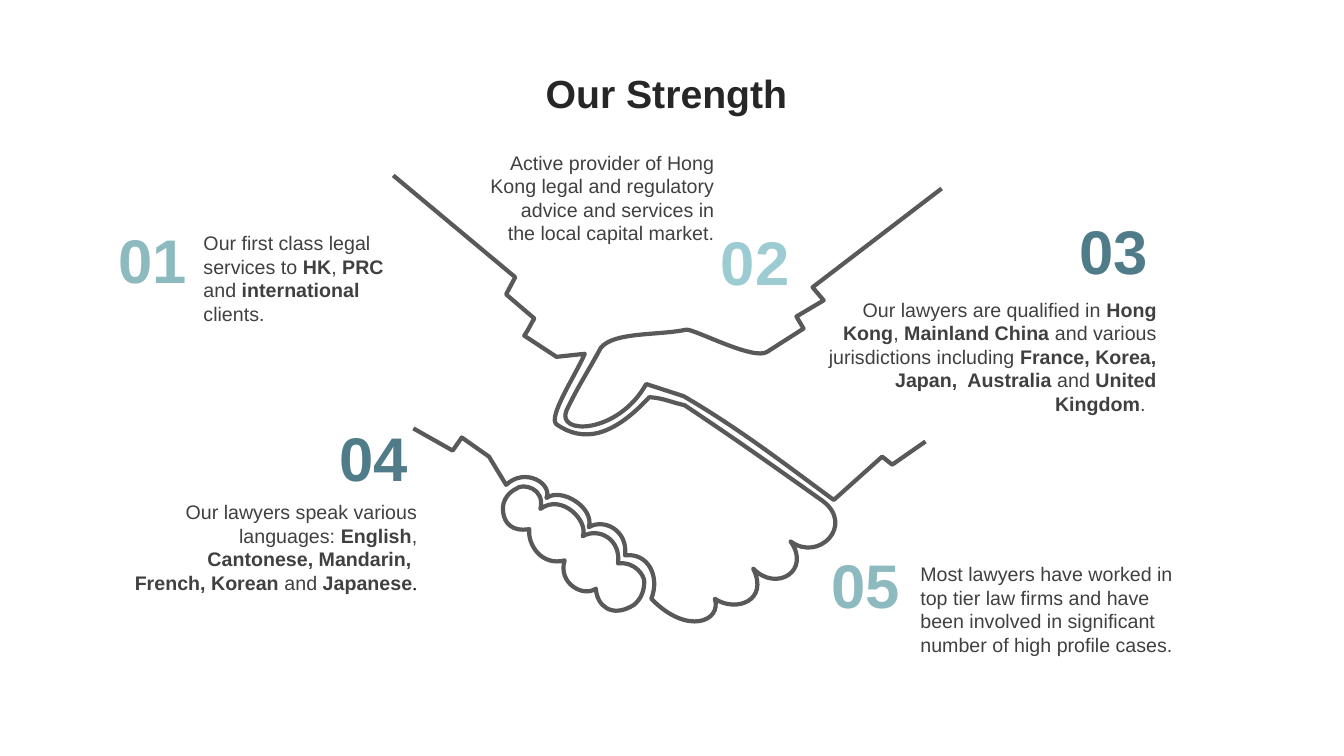
from lxml import etree
from pptx import Presentation
from pptx.dml.color import RGBColor
from pptx.enum.text import MSO_ANCHOR, MSO_AUTO_SIZE, PP_ALIGN
from pptx.oxml.ns import qn
from pptx.util import Inches, Pt

LEFT, CENTER, RIGHT = PP_ALIGN.LEFT, PP_ALIGN.CENTER, PP_ALIGN.RIGHT
MIDDLE = MSO_ANCHOR.MIDDLE
FIT = MSO_AUTO_SIZE.SHAPE_TO_FIT_TEXT
WIDTH, HEIGHT = Inches(13.33), Inches(7.5)
INK, GREY, LINE, BLACK = "262626", "404040", "595959", "000000"
PALE, TEAL, DEEP = "9CCCD2", "8CBABE", "507C89"

STRENGTHS = [
    ("02", PALE, (52.25, 28.93), (35.74, 19.28, 18.15, 13.87), RIGHT,
     "Active provider of Hong Kong legal and regulatory advice and services "
     "in the local capital market."),
    ("04", DEEP, (23.88, 54.93), (9.2, 65.47, 22.58, 17.07), RIGHT,
     "Our lawyers speak various languages: **English**, **Cantonese, Mandarin,  "
     "French, Korean **and** Japanese**."),
    ("05", TEAL, (60.46, 71.73), (67.74, 73.7, 21.83, 13.87), LEFT,
     "Most lawyers have worked in top tier law firms and have been involved in "
     "significant number of high profile cases."),
    ("03", DEEP, (78.92, 27.47), (60.46, 38.72, 26.33, 17.07), RIGHT,
     "Our lawyers are qualified in **Hong Kong**,** Mainland China **and various "
     "jurisdictions including **France, Korea, Japan,  Australia **and** "
     "United Kingdom**.  "),
    ("01", TEAL, (7.43, 28.67), (14.4, 29.95, 16.88, 13.87), LEFT,
     "Our first class legal services to **HK**, **PRC** and **international** clients."),
]

UPPER_HAND = [
    (9.34, 1.87), (8.06, 2.85), (8.17, 2.98), (7.9, 3.14), (7.97, 3.26), (7.61, 3.49),
    (7.48, 3.58, 6.9, 3.27, 6.81, 3.27), (6.53, 3.33, 6.09, 3.29, 5.96, 3.45),
    (5.83, 3.69, 5.74, 3.82, 5.62, 4.07), (5.51, 4.32, 6.13, 4.31, 6.41, 3.81),
    (6.78, 3.93), (7.33, 4.25, 7.78, 4.6, 8.27, 4.96),
    (8.75, 4.53), (8.85, 4.61), (9.18, 4.38),
]
LOWER_HAND = [
    (3.9, 1.74), (5.11, 2.75), (5.02, 2.92), (5.3, 3.16),
    (5.27, 3.2, 5.26, 3.24, 5.2, 3.33), (5.52, 3.54), (5.8, 3.51),
    (5.71, 3.72, 5.43, 4.14, 5.52, 4.21), (5.78, 4.39, 6.07, 4.34, 6.44, 3.94),
    (6.58, 3.95, 6.62, 3.98, 6.79, 4.02), (7.33, 4.38, 7.68, 4.63, 8.16, 4.97),
    (8.48, 5.21, 8.12, 5.58, 7.84, 5.37), (8.05, 5.66, 7.7, 5.88, 7.47, 5.64),
    (7.63, 5.96, 7.3, 6.08, 7.09, 5.94), (7.16, 6.16, 6.82, 6.31, 6.46, 5.94),
    (6.55, 5.71, 6.42, 5.48, 6.2, 5.51), (6.23, 5.26, 5.99, 5.14, 5.84, 5.23),
    (5.9, 5.04, 5.57, 4.83, 5.42, 4.94), (5.48, 4.8, 5.21, 4.63, 5.02, 4.81),
    (4.85, 4.53), (4.58, 4.34), (4.49, 4.47), (4.1, 4.25),
]
FINGERS = [
    (4.99, 5.08), (5, 5.18, 5.07, 5.28, 5.25, 5.25), (5.23, 5.4, 5.37, 5.62, 5.6, 5.56),
    (5.53, 5.79, 5.79, 5.93, 5.91, 5.84), (5.92, 6.01, 6.07, 6.14, 6.29, 6),
    (6.36, 5.94, 6.39, 5.86, 6.39, 5.77), (6.39, 5.71, 6.3, 5.57, 6.13, 5.59),
    (6.16, 5.35, 5.94, 5.23, 5.78, 5.32), (5.84, 5.17, 5.57, 4.89, 5.36, 5.05),
    (5.41, 4.84, 5.18, 4.79, 5.12, 4.85), (5.07, 4.87, 4.97, 4.95, 4.99, 5.08),
]
HANDSHAKE = [
    (UPPER_HAND, (5.61, 1.87, 3.73, 3.09), False),
    (LOWER_HAND, (3.9, 1.74, 4.38, 4.42), False),
    (FINGERS, (4.99, 4.83, 1.41, 1.23), True),
]


def rgb(value):
    """Turn a hex string into a colour."""
    return RGBColor.from_string(value)


def place(x, y, w, h):
    """Turn percentages of the slide into left, top, width and height."""
    return [int(size * share / 100)
            for size, share in zip((WIDTH, HEIGHT, WIDTH, HEIGHT), (x, y, w, h))]


def style(r, size, color, bold=False, font="Arial"):
    """Format one run."""
    r.font.name, r.font.size, r.font.bold = font, Pt(size), bold
    r.font.color.rgb = rgb(color)


def add_title(s, text):
    """Place and format the slide title."""
    title = s.shapes.title
    title.left, title.top, title.width, title.height = place(2.1, 7.07, 94.97, 10.53)
    tf = title.text_frame
    tf.text, tf.vertical_anchor = text, MIDDLE
    p = tf.paragraphs[0]
    p.alignment = CENTER
    style(p.runs[0], 28, INK, True)


def add_box(s, box, align):
    """Add a wrapping text box and return its paragraph."""
    tf = s.shapes.add_textbox(*place(*box)).text_frame
    tf.word_wrap, tf.auto_size = True, FIT
    p = tf.paragraphs[0]
    p.alignment = align
    return p


def add_number(s, text, color, position):
    """Add a large number with a thin white outline."""
    p = add_box(s, (*position, 7.88, 11.2), CENTER)
    p.text = text
    r = p.runs[0]
    style(r, 44, color, True)
    ln = etree.Element(qn("a:ln"), w=str(Pt(1)))
    fill = etree.SubElement(ln, qn("a:solidFill"))
    etree.SubElement(fill, qn("a:srgbClr"), val="FFFFFF")
    r._r.get_or_add_rPr().insert(0, ln)


def add_body(s, text, box, align):
    """Add text in which double asterisks switch bold, and return its last run."""
    p = add_box(s, box, align)
    for i, part in enumerate(text.split("**")):
        r = p.add_run()
        r.text = part
        style(r, 14, GREY, i % 2 == 1)
    return r


def add_outline(group, outline, frame, closed):
    """Draw an unfilled outline of corners and Bezier curves inside a frame in inches."""
    x, y, w, h = (Inches(v) for v in frame)
    ends = [(Inches(step[-2]), Inches(step[-1])) for step in outline]
    builder = group.shapes.build_freeform(*ends[0])
    builder.add_line_segments(ends[1:], close=closed)
    sp = builder.convert_to_shape()
    sp.left, sp.top, sp.width, sp.height = x, y, w, h
    geometry = sp._element.find(".//" + qn("a:path"))
    geometry.set("w", str(w))
    geometry.set("h", str(h))
    for segment, step in zip(list(geometry), outline):
        if len(step) == 6:
            curve = etree.Element(qn("a:cubicBezTo"))
            geometry.replace(segment, curve)
            segment = curve
        for old in list(segment):
            segment.remove(old)
        for px, py in zip(step[::2], step[1::2]):
            etree.SubElement(segment, qn("a:pt"),
                             x=str(Inches(px) - x), y=str(Inches(py) - y))
    sp.shadow.inherit = False
    sp.fill.background()
    sp.line.color.rgb, sp.line.width = rgb(LINE), Pt(3)


def main():
    """Build the slide and save it."""
    prs = Presentation()
    prs.slide_width, prs.slide_height = WIDTH, HEIGHT
    s = prs.slides.add_slide(prs.slide_layouts[5])
    add_title(s, "Our Strength")
    group = s.shapes.add_group_shape()
    for outline, frame, closed in HANDSHAKE:
        add_outline(group, outline, frame, closed)
    for number, color, position, box, align, text in STRENGTHS:
        add_number(s, number, color, position)
        r = add_body(s, text, box, align)
        if number == "04":
            style(r, 14, BLACK, font="Times New Roman")
    prs.save("out.pptx")


if __name__ == "__main__":
    main()
